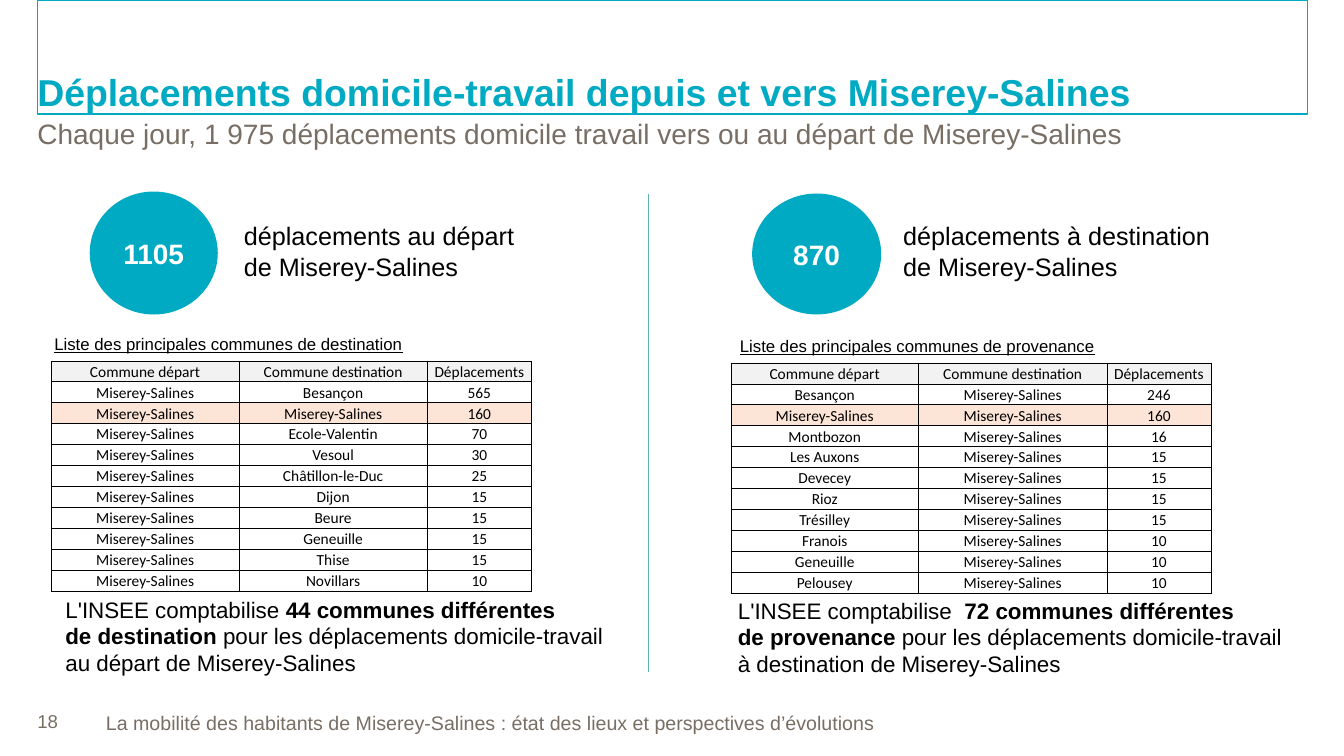
from lxml.etree import SubElement
from pptx import Presentation
from pptx.dml.color import RGBColor
from pptx.enum.shapes import MSO_CONNECTOR, MSO_SHAPE
from pptx.enum.text import MSO_ANCHOR, MSO_AUTO_SIZE, PP_ALIGN
from pptx.oxml.ns import qn
from pptx.util import Inches, Pt

TEAL = RGBColor(0x00, 0xAA, 0xC3)
TAUPE = RGBColor(0x78, 0x6E, 0x64)
RULE = RGBColor(0x60, 0xB2, 0xB2)
BLACK = RGBColor(0x00, 0x00, 0x00)
WHITE = RGBColor(0xFF, 0xFF, 0xFF)
GREY = RGBColor(0xF2, 0xF2, 0xF2)
PEACH = RGBColor(0xFC, 0xE4, 0xD6)

FLUSH = dict(margin_left=0, margin_right=0, margin_top=0, margin_bottom=0,
             word_wrap=True, auto_size=MSO_AUTO_SIZE.NONE)
MIDDLE = dict(FLUSH, vertical_anchor=MSO_ANCHOR.MIDDLE)
GROW = dict(word_wrap=False, auto_size=MSO_AUTO_SIZE.SHAPE_TO_FIT_TEXT)
HOME = "Miserey-Salines"


def write(frame, parts, size, color, align=PP_ALIGN.LEFT, name="Arial", **look):
    """Fill one paragraph with (text, bold) parts; a newline is a line break."""
    para = frame.paragraphs[0]
    para.alignment = align
    for text, bold in parts:
        for i, line in enumerate(text.split("\n")):
            if i:
                para.add_line_break()
            run = para.add_run()
            run.text = line
            run.font.color.rgb = color
            font = dict(look, size=Pt(size), name=name, bold=bold)
            for key, value in font.items():
                setattr(run.font, key, value)
    return para


def label(box, parts, size, color, form, **look):
    """Add a text box at box = (left, top, width, height) in inches."""
    frame = slide.shapes.add_textbox(*map(Inches, box)).text_frame
    for key, value in form.items():
        setattr(frame, key, value)
    write(frame, parts, size, color, **look)


deck = Presentation()
deck.slide_width, deck.slide_height = Inches(13.33), Inches(7.5)
slide = deck.slides.add_slide(deck.slide_layouts[1])

# Title and subtitle
title, body = slide.shapes.title, slide.placeholders[1]
heads = [
    (title, (0.37, 0, 12.6, 1.13), 26.7, TEAL, True, MSO_ANCHOR.BOTTOM,
     "Déplacements domicile-travail depuis et vers Miserey-Salines"),
    (body, (0.37, 1.16, 12.81, 0.53), 20, TAUPE, False, MSO_ANCHOR.TOP,
     "Chaque jour, 1 975 déplacements domicile travail vers ou au départ de Miserey-Salines"),
]
for shape, box, size, color, bold, anchor, text in heads:
    shape.left, shape.top, shape.width, shape.height = map(Inches, box)
    for key, value in dict(FLUSH, vertical_anchor=anchor).items():
        setattr(shape.text_frame, key, value)
    para = write(shape.text_frame, [(text, bold)], size, color)
    para.space_before = Pt(0)
    props = para._p.get_or_add_pPr()
    props.set("marL", "0")
    props.set("indent", "0")
    SubElement(props, qn("a:buNone"))
title.line.color.rgb = TEAL
title.line.width = Pt(1)

# Footer
label((0.37, 6.82, 0.52, 0.67), [("18", False)], 13.3, TAUPE, MIDDLE)
label((1.05, 6.83, 9.45, 0.67),
      [("La mobilité des habitants de Miserey-Salines : état des lieux et perspectives d’évolutions", False)],
      14, TAUPE, MIDDLE)

# Divider
rule = slide.shapes.add_connector(MSO_CONNECTOR.STRAIGHT, Inches(6.43), Inches(1.92),
                                  Inches(6.43), Inches(6.67))
rule.line.color.rgb = RULE
rule.line.width = Pt(0.75)
SubElement(rule._element.spPr, qn("a:effectLst"))

# Content of the two halves
leave = [("Besançon", 565), (HOME, 160), ("Ecole-Valentin", 70), ("Vesoul", 30),
         ("Châtillon-le-Duc", 25), ("Dijon", 15), ("Beure", 15), ("Geneuille", 15),
         ("Thise", 15), ("Novillars", 10)]
arrive = [("Besançon", 246), (HOME, 160), ("Montbozon", 16), ("Les Auxons", 15),
          ("Devecey", 15), ("Rioz", 15), ("Trésilley", 15), ("Franois", 10),
          ("Geneuille", 10), ("Pelousey", 10)]
halves = [
    dict(total="1105", disc=(0.89, 1.9, 1.27, 1.22),
         claim="déplacements au départ \nde Miserey-Salines", beside=(2.32, 2.14, 3.3, 0.71),
         list="Liste des principales communes de destination", above=(0.44, 3.26, 3.68, 0.3),
         rows=[(HOME, town, count) for town, count in leave], grid=(0.51, 3.58, 4.76, 2.29),
         note=[("L'INSEE comptabilise ", False),
               ("44 communes différentes \nde destination ", True),
               ("pour les déplacements domicile-travail \nau départ de Miserey-Salines", False)],
         below=(0.55, 5.86, 5.66, 0.91)),
    dict(total="870", disc=(7.46, 1.92, 1.28, 1.2),
         claim="déplacements à destination \nde Miserey-Salines", beside=(8.86, 2.14, 3.34, 0.71),
         list="Liste des principales communes de provenance", above=(7.24, 3.28, 3.74, 0.3),
         rows=[(town, HOME, count) for town, count in arrive], grid=(7.25, 3.6, 4.76, 2.29),
         note=[("L'INSEE comptabilise ", False),
               (" 72 communes différentes \nde provenance ", True),
               ("pour les déplacements domicile-travail\nà destination de Miserey-Salines", False)],
         below=(7.22, 5.87, 5.66, 0.91)),
]
header = ("Commune départ", "Commune destination", "Déplacements")
inset = dict(margin_left=Inches(0.01), margin_right=Inches(0.01), margin_top=Inches(0.01),
             margin_bottom=0, vertical_anchor=MSO_ANCHOR.MIDDLE)

for half in halves:
    # Total in a disc, with its claim
    disc = slide.shapes.add_shape(MSO_SHAPE.OVAL, *map(Inches, half["disc"]))
    disc.shadow.inherit = False
    disc.fill.solid()
    disc.fill.fore_color.rgb = TEAL
    disc.line.fill.background()
    disc.text_frame.vertical_anchor = MSO_ANCHOR.MIDDLE
    write(disc.text_frame, [(half["total"], True)], 20, WHITE, PP_ALIGN.CENTER)
    label(half["beside"], [(half["claim"], False)], 18, BLACK, GROW)

    # Table of towns
    label(half["above"], [(half["list"], False)], 12, BLACK, GROW, underline=True)
    rows = [header] + half["rows"]
    table = slide.shapes.add_table(len(rows), 3, *map(Inches, half["grid"])).table
    table.first_row = table.horz_banding = False
    for column, width in zip(table.columns, (1.86, 1.87, 1.03)):
        column.width = Inches(width)
    for r, row in enumerate(rows):
        for c, value in enumerate(row):
            cell = table.cell(r, c)
            for key, size in inset.items():
                setattr(cell, key, size)
            write(cell.text_frame, [(str(value), False)], 11, BLACK, PP_ALIGN.CENTER, "Calibri")
            props = cell._tc.get_or_add_tcPr()
            for side in ("a:lnL", "a:lnR", "a:lnT", "a:lnB"):
                edge = SubElement(props, qn(side), w=str(Pt(0.5)))
                SubElement(SubElement(edge, qn("a:solidFill")), qn("a:srgbClr"), val=str(BLACK))
            tint = GREY if r == 0 else PEACH if row[0] == row[1] else None
            if tint:
                cell.fill.solid()
                cell.fill.fore_color.rgb = tint
            else:
                cell.fill.background()

    # Closing note
    label(half["below"], half["note"], 16, BLACK, GROW)

deck.save("out.pptx")
